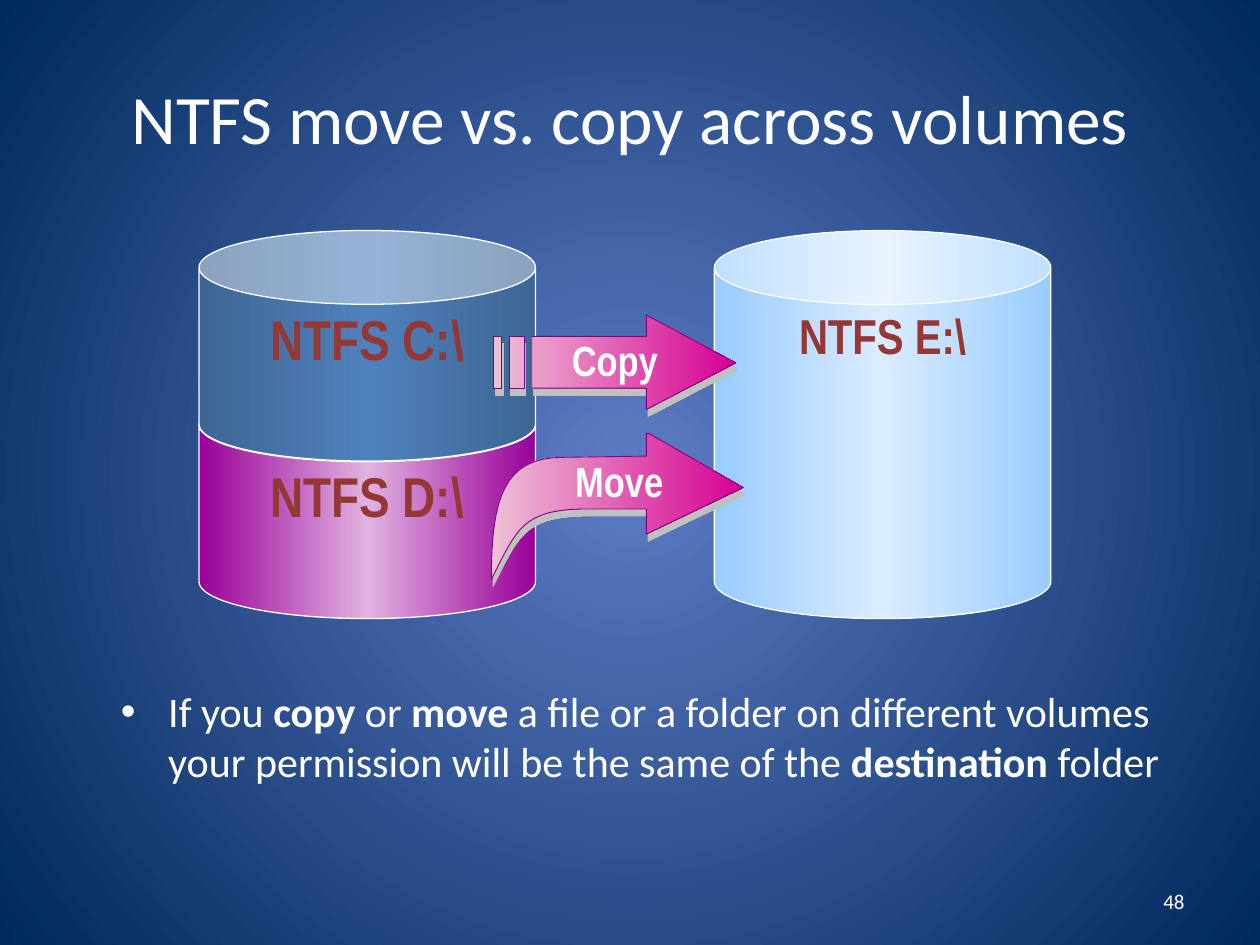
import pptx
import pptx.util
import pptx.dml.color
import pptx.enum.shapes
import pptx.enum.text
import pptx.oxml
import pptx.oxml.ns

Inches = pptx.util.Inches
RGBColor = pptx.dml.color.RGBColor
ALIGN = pptx.enum.text.PP_ALIGN
ANCHOR = pptx.enum.text.MSO_ANCHOR
qn = pptx.oxml.ns.qn
NSDECLS = pptx.oxml.ns.nsdecls("a")

WHITE = RGBColor(0xFF, 0xFF, 0xFF)
BLACK = RGBColor(0x00, 0x00, 0x00)
SKY = RGBColor(0x5E, 0x7C, 0xC5)
NAVY = RGBColor(0x00, 0x29, 0x5C)
BRICK = RGBColor(0x95, 0x37, 0x35)
PURPLE = RGBColor(0x99, 0x00, 0x99)
LILAC = RGBColor(0xE0, 0xB2, 0xE0)
ICE = RGBColor(0x99, 0xCC, 0xFF)
PALE_ICE = RGBColor(0xDA, 0xEC, 0xFF)
STEEL = RGBColor(0x3E, 0x66, 0x95)
BLUE = RGBColor(0x4F, 0x81, 0xBD)
ROSE = RGBColor(0xED, 0xC1, 0xD5)
MAGENTA = RGBColor(0xD6, 0x00, 0x93)
PLUM = RGBColor(0x80, 0x00, 0x80)
SILVER = RGBColor(0xC0, 0xC0, 0xC0)

BODY_FONT = {"name": "Calibri", "bold": False}
LABEL_FONT = {"name": "Arial Narrow", "bold": True}


def set_attributes(target, values):
    """Set every attribute named in values on target."""
    for name, value in values.items():
        setattr(target, name, value)


def write_run(paragraph, text, size, color, font_values):
    """Add one formatted run to a paragraph and return it."""
    run = paragraph.add_run()
    run.text = text
    set_attributes(run.font, {"size": pptx.util.Pt(size), **font_values})
    run.font.color.rgb = color
    return run


def write_label(frame, text, size, color):
    """Write a centred bold label into a text frame and return its run."""
    label = frame.paragraphs[0]
    set_attributes(label, {"alignment": ALIGN.CENTER, "line_spacing": 0.93})
    return write_run(label, text, size, color, LABEL_FONT)


def paint_gradient(fill, owner, colors, direction='<a:lin ang="0" scaled="0"/>'):
    """Fill with evenly spaced gradient colours in the given direction."""
    fill.gradient()
    gradient = next(owner.iter(qn("a:gradFill")))
    step = 100000 // (len(colors) - 1)
    stops = "".join(
        f'<a:gs pos="{i * step}"><a:srgbClr val="{color}"/></a:gs>'
        for i, color in enumerate(colors))
    painted = pptx.oxml.parse_xml(
        f'<a:gradFill {NSDECLS} rotWithShape="1">'
        f"<a:gsLst>{stops}</a:gsLst>{direction}</a:gradFill>")
    gradient.getparent().replace(gradient, painted)


def drop_shadow(color, distance, angle):
    """Return an effect list that holds one hard shadow."""
    return pptx.oxml.parse_xml(
        f'<a:effectLst {NSDECLS}><a:outerShdw dist="{pptx.util.Pt(distance)}" '
        f'dir="{angle * 60000}" algn="ctr" rotWithShape="0">'
        f'<a:srgbClr val="{color}"/></a:outerShdw></a:effectLst>')


def curve(start, control_1, control_2, end, steps=16):
    """Return points along a cubic curve, both ends included."""
    points = []
    for i in range(steps + 1):
        t = i / steps
        weights = ((1 - t) ** 3, 3 * t * (1 - t) ** 2, 3 * t * t * (1 - t), t ** 3)
        nodes = (start, control_1, control_2, end)
        points.append(tuple(
            sum(w * node[axis] for w, node in zip(weights, nodes)) for axis in (0, 1)))
    return points


def paint_background(slide):
    """Paint the radial blue background."""
    paint_gradient(
        slide.background.fill, slide._element, (SKY, NAVY),
        '<a:path path="circle"><a:fillToRect l="50000" t="50000" r="50000" b="50000"/></a:path>')


def place(part, box):
    """Move a part to a box of left, top, width and height in inches."""
    set_attributes(part, dict(zip(("left", "top", "width", "height"), map(Inches, box))))


def add_title(slide, box, text):
    """Place the slide title in the title placeholder."""
    title = slide.shapes.title
    place(title, box)
    title.text_frame.vertical_anchor = ANCHOR.MIDDLE
    heading = title.text_frame.paragraphs[0]
    heading.alignment = ALIGN.CENTER
    write_run(heading, text, 39.6, WHITE, BODY_FONT)


def add_rule(slide, box, phrases):
    """Place the bulleted rule, with its key words in bold."""
    rule = slide.placeholders[1]
    place(rule, box)
    for text, bold in phrases:
        write_run(rule.text_frame.paragraphs[0], text, 24, WHITE, {**BODY_FONT, "bold": bold})


def add_page_number(slide, box, number):
    """Place the page number at the right of its box."""
    frame = slide.shapes.add_textbox(*map(Inches, box)).text_frame
    set_attributes(frame, {"word_wrap": True, "vertical_anchor": ANCHOR.MIDDLE})
    frame.paragraphs[0].alignment = ALIGN.RIGHT
    write_run(frame.paragraphs[0], number, 12, WHITE, BODY_FONT)


def add_volume(slide, box, lid, colors, text, size):
    """Draw a disk volume as a labelled can."""
    volume = slide.shapes.add_shape(
        pptx.enum.shapes.MSO_SHAPE.CAN, *map(Inches, box))
    volume.adjustments[0] = lid
    volume.shadow.inherit = False
    paint_gradient(volume.fill, volume._element, colors)
    volume.line.color.rgb = WHITE
    volume.line.width = pptx.util.Pt(0.75)
    set_attributes(volume.text_frame, {"word_wrap": False, "vertical_anchor": ANCHOR.TOP})
    write_label(volume.text_frame, text, size, BRICK)


def add_arrow(slide, left, top, contours):
    """Draw a shadowed pink arrow from contours relative to left and top."""
    placed = [[(Inches(left + x), Inches(top + y)) for x, y in contour]
              for contour in contours]
    builder = slide.shapes.build_freeform(*placed[0][0])
    for i, contour in enumerate(placed):
        if i:
            builder.move_to(*contour[0])
        builder.add_line_segments(contour[1:], close=True)
    arrow = builder.convert_to_shape()
    paint_gradient(arrow.fill, arrow._element, (ROSE, MAGENTA))
    arrow.line.color.rgb = PLUM
    arrow.line.width = pptx.util.Pt(0.5)
    arrow._element.spPr.append(drop_shadow(SILVER, 4.1, 76))
    return arrow


def add_copy_arrow(slide, left, top):
    """Draw the striped straight arrow with its label."""
    shaft_top, shaft_bottom = 0.17, 0.58
    head = [(1.21, 0), (1.21, shaft_top), (0.3, shaft_top), (0.3, shaft_bottom),
            (1.21, shaft_bottom), (1.21, 0.75), (1.92, 0.38)]
    stripes = [[(x, shaft_top), (x, shaft_bottom), (x + w, shaft_bottom), (x + w, shaft_top)]
               for x, w in ((0.12, 0.12), (0, 0.06))]
    frame = add_arrow(slide, left, top, [head, *stripes]).text_frame
    set_attributes(frame, {
        "word_wrap": False, "vertical_anchor": ANCHOR.MIDDLE,
        "margin_top": Inches(0.03), "margin_bottom": Inches(0.03)})
    write_label(frame, "Copy", 24, WHITE)


def add_move_arrow(slide, left, top):
    """Draw the curved arrow and the shadowed label over it."""
    outer = curve((0.57, 0.19), (0.1, 0.19), (0, 0.51), (0, 1.16))
    inner = curve((0, 1.16), (0.2, 0.76), (0.25, 0.61), (0.72, 0.6))
    add_arrow(slide, left, top, [
        [(1.23, 0), (1.23, 0.18), *outer, *inner[1:],
         (1.23, 0.6), (1.23, 0.8), (2, 0.43), (1.25, 0)]])
    frame = slide.shapes.add_textbox(
        *map(Inches, (left + 0.23, top + 0.16, 1.57, 0.4))).text_frame
    frame.word_wrap = True
    label = write_label(frame, "Move", 24, WHITE)
    label.font._element.find(qn("a:solidFill")).addnext(drop_shadow(BLACK, 2, 45))


def main():
    """Build and save the slide."""
    deck = pptx.Presentation()
    set_attributes(deck, {"slide_width": Inches(10), "slide_height": Inches(7.5)})
    slide = deck.slides.add_slide(deck.slide_layouts[1])
    paint_background(slide)
    add_title(slide, (0.5, 0.3, 9, 1.25), "NTFS move vs. copy across volumes")
    add_rule(slide, (0.86, 5.39, 8.83, 1.33), (
        ("If you ", False), ("copy", True), (" or ", False), ("move ", True),
        ("a file or a folder on different volumes your permission will be "
         "the same of the ", False),
        ("destination", True), (" folder", False)))
    add_page_number(slide, (7.17, 6.95, 2.33, 0.4), "48")
    for box, lid, colors, text, size in (
            ((1.58, 3.08, 2.67, 1.83), 0.32, (PURPLE, LILAC, PURPLE), "NTFS D:\\", 32),
            ((5.67, 1.83, 2.67, 3.08), 0.22, (ICE, PALE_ICE, ICE), "NTFS E:\\", 28),
            ((1.58, 1.83, 2.67, 1.83), 0.32, (STEEL, BLUE, STEEL), "NTFS C:\\", 32)):
        add_volume(slide, box, lid, colors, text, size)
    add_copy_arrow(slide, 3.92, 2.5)
    add_move_arrow(slide, 3.9, 3.44)
    deck.save("out.pptx")


if __name__ == "__main__":
    main()
